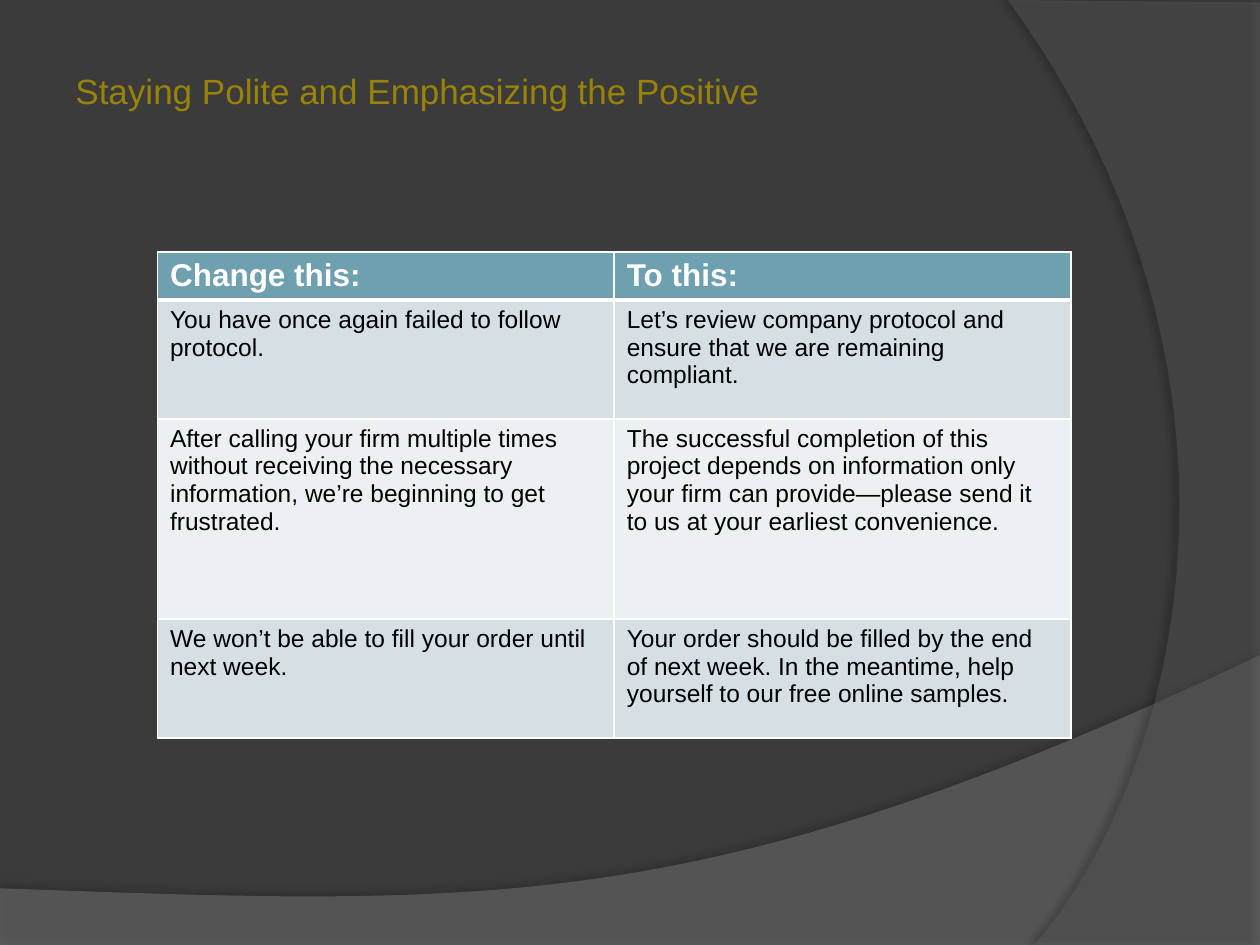
import pptx
import pptx.dml.color
import pptx.oxml
import pptx.oxml.ns
import pptx.util

Pt = pptx.util.Pt
RGBColor = pptx.dml.color.RGBColor

BACKGROUND = RGBColor(0x3B, 0x3B, 0x3B)
LOWER_WAVE = RGBColor(0x7F, 0x7F, 0x7F)
RIGHT_WAVE = RGBColor(0x5E, 0x5E, 0x5E)
GOLD = RGBColor(0x99, 0x83, 0x07)
WHITE = RGBColor(0xFF, 0xFF, 0xFF)
BLACK = RGBColor(0x00, 0x00, 0x00)
HEADER_FILL = RGBColor(0x6E, 0xA0, 0xB0)
BAND_FILLS = (RGBColor(0xEB, 0xF0, 0xF2), RGBColor(0xD5, 0xDF, 0xE4))

FONT = "Arial"
CURVE_STEPS = 40
ROW_HEIGHTS = (24, 68, 114.5, 68)
PHRASES = (
    ("Change this:", "To this:"),
    ("You have once again failed to follow protocol.",
     "Let’s review company protocol and ensure that we are remaining compliant."),
    ("After calling your firm multiple times without receiving the necessary "
     "information, we’re beginning to get frustrated.",
     "The successful completion of this project depends on information only "
     "your firm can provide—please send it to us at your earliest convenience."),
    ("We won’t be able to fill your order until next week.",
     "Your order should be filled by the end of next week. In the meantime, "
     "help yourself to our free online samples."),
)


def make_element(tag, content="", attributes=""):
    namespace = pptx.oxml.ns.nsdecls("a")
    return pptx.oxml.parse_xml(
        f"<a:{tag} {namespace} {attributes}>{content}</a:{tag}>")


def curve_points(start, first_control, second_control, end):
    points = []
    for step in range(1, CURVE_STEPS + 1):
        t = step / CURVE_STEPS
        weights = ((1 - t) ** 3, 3 * t * (1 - t) ** 2, 3 * t ** 2 * (1 - t), t ** 3)
        corners = (start, first_control, second_control, end)
        points.append(tuple(
            sum(weight * corner[axis] for weight, corner in zip(weights, corners))
            for axis in (0, 1)))
    return points


def add_wave(slide, points, color, opacity, shadow_opacity, distance, direction):
    start, *others = [(Pt(x), Pt(y)) for x, y in points]
    builder = slide.shapes.build_freeform(*start, scale=1.0)
    builder.add_line_segments(others, close=True)
    shape = builder.convert_to_shape()
    shape.fill.solid()
    shape.fill.fore_color.rgb = color
    shape.line.fill.background()
    color_element = shape._element.spPr.find(
        ".//" + pptx.oxml.ns.qn("a:srgbClr"))
    color_element.append(make_element("alpha", attributes=f'val="{opacity * 1000}"'))
    shadow = (
        f'<a:outerShdw blurRad="{Pt(4)}" dist="{Pt(distance)}" '
        f'dir="{direction * 60000}" algn="ctr" rotWithShape="0">'
        f'<a:srgbClr val="{BLACK}"><a:alpha val="{shadow_opacity * 1000}"/>'
        "</a:srgbClr></a:outerShdw>")
    shape._element.spPr.append(make_element("effectLst", shadow))


def format_text(text_frame, size, color, bold=False):
    for paragraph in text_frame.paragraphs:
        for run in paragraph.runs:
            run.font.name = FONT
            run.font.size = Pt(size)
            run.font.bold = bold
            run.font.color.rgb = color


def add_title(slide, text):
    shape = slide.shapes.add_textbox(Pt(36), Pt(36), Pt(456), Pt(31.5))
    shape.text_frame.word_wrap = True
    shape.text_frame.text = text
    format_text(shape.text_frame, 20, GOLD)


def set_borders(cell, widths):
    properties = cell._tc.get_or_add_tcPr()
    fill = f'<a:solidFill><a:srgbClr val="{WHITE}"/></a:solidFill>'
    for index, (side, width) in enumerate(zip("LRTB", widths)):
        properties.insert(
            index, make_element(f"ln{side}", fill, f'w="{Pt(width)}"'))


def add_phrase_table(slide):
    frame = slide.shapes.add_table(
        len(PHRASES), 2, Pt(90), Pt(144), Pt(522), Pt(sum(ROW_HEIGHTS)))
    table = frame.table
    for row_index, (phrases, height) in enumerate(zip(PHRASES, ROW_HEIGHTS)):
        table.rows[row_index].height = Pt(height)
        is_header = row_index == 0
        for column_index, phrase in enumerate(phrases):
            cell = table.cell(row_index, column_index)
            cell.text_frame.text = phrase
            format_text(cell.text_frame, 18 if is_header else 14,
                        WHITE if is_header else BLACK, is_header)
            cell.fill.solid()
            cell.fill.fore_color.rgb = (
                HEADER_FILL if is_header else BAND_FILLS[row_index % 2])
            top = 3 if row_index == 1 else 1
            bottom = 3 if is_header else 1
            set_borders(cell, (1, 1, top, bottom))


def main():
    presentation = pptx.Presentation()
    presentation.slide_width = Pt(720)
    presentation.slide_height = Pt(540)
    slide = presentation.slides.add_slide(presentation.slide_layouts[6])
    slide.background.fill.solid()
    slide.background.fill.fore_color.rgb = BACKGROUND

    lower_edge = curve_points((720, 374.4), (402.5, 524.9), (281.5, 517.7), (0, 507.6))
    add_wave(slide, [(0, 507.6), (0, 540.7), (720, 540.7), (720, 374.4), *lower_edge],
             LOWER_WAVE, 45, 35, 3.5, 270)
    right_edge = curve_points((591.1, 540), (673.2, 445.7), (733, 216), (576, 0))
    add_wave(slide, [(720, 1.4), (720, 540), (591.1, 540), *right_edge],
             RIGHT_WAVE, 40, 45, 4, 180)

    add_phrase_table(slide)
    add_title(slide, "Staying Polite and Emphasizing the Positive")
    presentation.save("out.pptx")


if __name__ == "__main__":
    main()
